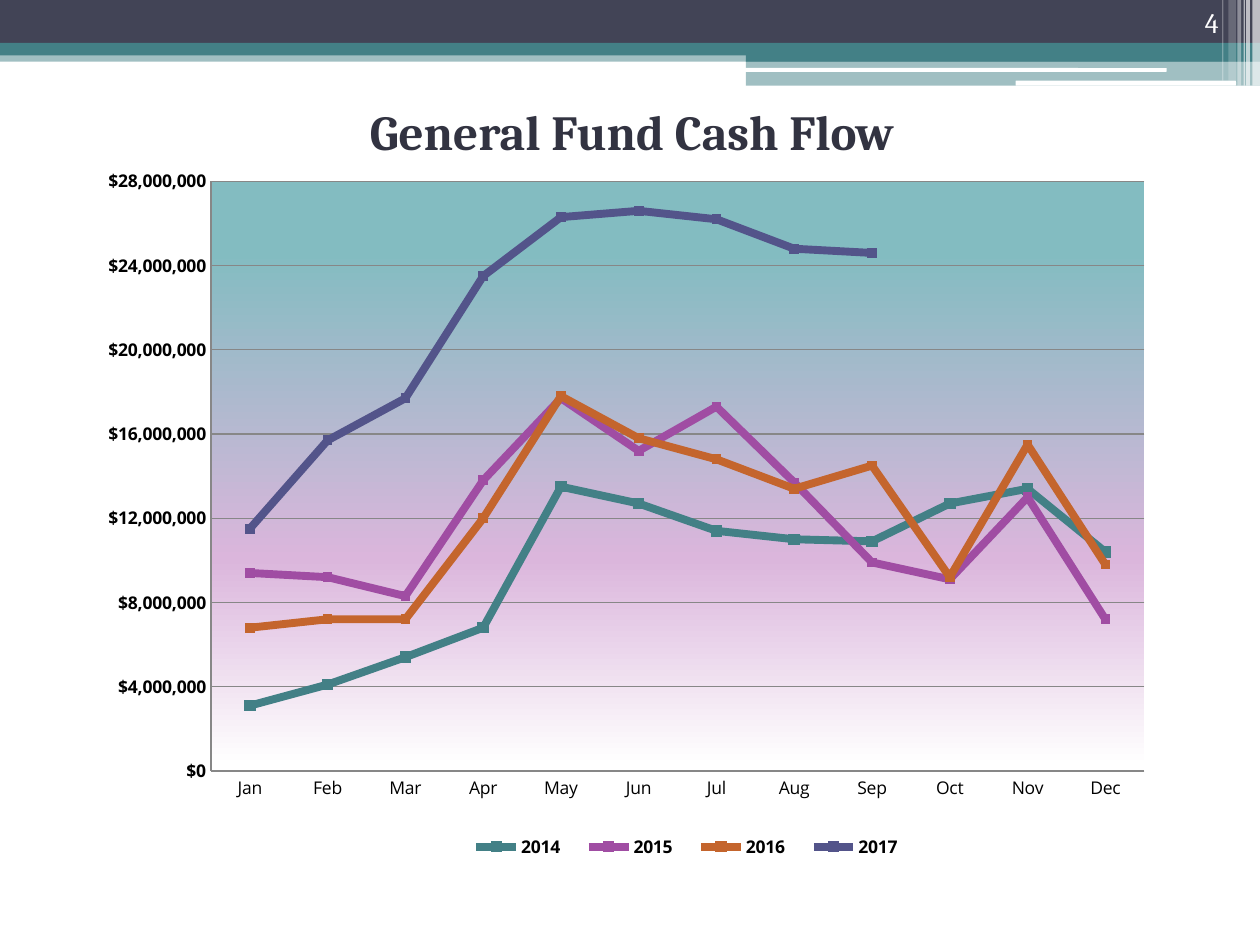
from dataclasses import dataclass
from typing import Optional

from lxml import etree
from pptx import Presentation
from pptx import util as u
from pptx.chart.data import CategoryChartData
from pptx.dml.color import RGBColor
from pptx.enum import chart as charts, shapes, text
from pptx.oxml import parse_xml
from pptx.oxml.ns import nsdecls, qn


@dataclass(frozen=True)
class Theme:
    navy: str = "424456"
    teal: str = "438086"
    white: str = "FFFFFF"
    black: str = "000000"
    title: str = "323341"
    grid: str = "878787"
    heading_font: str = "Cambria"
    chart_font: str = "Open Sans"
    title_size: int = 28
    number_size: int = 16
    chart_size: int = 10
    plot_stops: tuple = ((12, "83BCC1"), (64, "DBB6DC"), (99, "FFFFFF"))


@dataclass(frozen=True)
class Band:
    left: float
    top: float
    width: float
    height: float
    color: str
    opacity: int = 100
    rounded: bool = False


@dataclass(frozen=True)
class Year:
    name: str
    color: str
    marker_size: int
    millions: tuple[Optional[float], ...]


THEME = Theme()

BANDS = [
    Band(0, 0.4, 10, 0.09, THEME.teal, 50),
    Band(0, 0, 10, 0.34, THEME.navy),
    Band(0, 0.34, 10, 0.1, THEME.teal),
    Band(5.92, 0.39, 4.08, 0.1, THEME.teal),
    Band(5.92, 0.48, 4.08, 0.2, THEME.teal, 50),
    Band(5.91, 0.54, 3.35, 0.03, THEME.white, rounded=True),
    Band(8.06, 0.64, 1.75, 0.04, THEME.white, rounded=True),
    Band(9.94, 0, 0.06, 0.68, THEME.white, 65),
    Band(9.89, 0, 0.03, 0.68, THEME.white, 65),
    Band(9.87, 0, 0.01, 0.68, THEME.white, 60),
    Band(9.82, 0, 0.03, 0.68, THEME.white, 40),
    Band(9.75, 0, 0.06, 0.64, THEME.white, 20),
    Band(9.7, 0, 0.01, 0.64, THEME.white, 30),
]

MONTHS = "Jan Feb Mar Apr May Jun Jul Aug Sep Oct Nov Dec".split()

YEARS = [
    Year("2014", "438086", 6, (3.1, 4.1, 5.4, 6.8, 13.5, 12.7, 11.4, 11, 10.9, 12.7, 13.4, 10.4)),
    Year("2015", "A04DA3", 5, (9.4, 9.2, 8.3, 13.8, 17.7, 15.2, 17.3, 13.7, 9.9, 9.1, 13, 7.2)),
    Year("2016", "C4652D", 5, (6.8, 7.2, 7.2, 12, 17.8, 15.8, 14.8, 13.4, 14.5, 9.2, 15.5, 9.8)),
    Year("2017", "53548A", 5, (11.5, 15.7, 17.7, 23.5, 26.3, 26.6, 26.2, 24.8, 24.6, None, None, None)),
]


def paint(fill, color: str) -> None:
    fill.solid()
    fill.fore_color.rgb = RGBColor.from_string(color)


def set_font(font, name: str, size: int, color: str, bold: bool = False) -> None:
    font.name = name
    font.size = u.Pt(size)
    font.bold = bold
    font.color.rgb = RGBColor.from_string(color)


def draw_band(slide, band: Band) -> None:
    kind = shapes.MSO_SHAPE.ROUNDED_RECTANGLE if band.rounded else shapes.MSO_SHAPE.RECTANGLE
    shape = slide.shapes.add_shape(
        kind, u.Inches(band.left), u.Inches(band.top), u.Inches(band.width), u.Inches(band.height)
    )
    shape.shadow.inherit = False
    shape.line.fill.background()
    paint(shape.fill, band.color)
    if band.opacity < 100:
        color = shape.fill._xPr.find(qn("a:solidFill"))[0]
        etree.SubElement(color, qn("a:alpha"), val=str(band.opacity * 1000))


def draw_text(slide, words: str, box: tuple[float, ...], anchor, align, size: int, color: str,
              bold: bool = False) -> None:
    frame = slide.shapes.add_textbox(*map(u.Inches, box)).text_frame
    frame.word_wrap = True
    frame.vertical_anchor = anchor
    paragraph = frame.paragraphs[0]
    paragraph.text = words
    paragraph.alignment = align
    set_font(paragraph.font, THEME.heading_font, size, color, bold)


def manual_layout(x: float, y: float, width: float, height: float, inner: bool = False):
    target = '<c:layoutTarget val="inner"/>' if inner else ""
    return parse_xml(
        f'<c:layout {nsdecls("c")}><c:manualLayout>{target}'
        '<c:xMode val="edge"/><c:yMode val="edge"/>'
        f'<c:x val="{x}"/><c:y val="{y}"/><c:w val="{width}"/><c:h val="{height}"/>'
        "</c:manualLayout></c:layout>"
    )


def style_plot_area(chart) -> None:
    plot_area = chart._chartSpace.chart.plotArea
    for layout in plot_area.findall(qn("c:layout")):
        plot_area.remove(layout)
    plot_area.insert(0, manual_layout(0.142, 0.06, 0.839, 0.78, inner=True))
    stops = "".join(
        f'<a:gs pos="{position * 1000}"><a:srgbClr val="{color}"/></a:gs>'
        for position, color in THEME.plot_stops
    )
    plot_area.append(parse_xml(
        f'<c:spPr {nsdecls("c", "a")}><a:gradFill><a:gsLst>{stops}</a:gsLst>'
        '<a:lin ang="5400000" scaled="0"/></a:gradFill><a:ln><a:noFill/></a:ln></c:spPr>'
    ))


def style_axes(chart) -> None:
    months, dollars = chart.category_axis, chart.value_axis
    dollars.minimum_scale, dollars.maximum_scale = 0, 28_000_000
    dollars.major_unit = 4_000_000
    dollars.has_major_gridlines = True
    dollars.tick_labels.number_format = '"$"#,##0'
    dollars.tick_labels.number_format_is_linked = False
    for axis, bold in ((months, False), (dollars, True)):
        axis.major_tick_mark = axis.minor_tick_mark = charts.XL_TICK_MARK.NONE
        set_font(axis.tick_labels.font, THEME.chart_font, THEME.chart_size, THEME.black, bold)
    for line in (months.format.line, dollars.format.line, dollars.major_gridlines.format.line):
        paint(line.fill, THEME.grid)
        line.width = u.Pt(0.75)


def style_legend(chart) -> None:
    chart.has_legend = True
    legend = chart.legend
    legend.position = charts.XL_LEGEND_POSITION.BOTTOM
    legend.include_in_layout = False
    set_font(legend.font, THEME.chart_font, THEME.chart_size, THEME.black, True)
    for layout in legend._element.findall(qn("c:layout")):
        legend._element.remove(layout)
    legend._element.find(qn("c:legendPos")).addnext(manual_layout(0.36, 0.91, 0.42, 0.06))


def draw_chart(slide) -> None:
    data = CategoryChartData()
    data.categories = MONTHS
    for year in YEARS:
        data.add_series(year.name, [None if m is None else round(m * 1_000_000) for m in year.millions])
    chart = slide.shapes.add_chart(
        charts.XL_CHART_TYPE.LINE_MARKERS,
        u.Inches(0.42), u.Inches(1.08), u.Inches(8.83), u.Inches(6), data,
    ).chart
    chart.has_title = False
    set_font(chart.font, THEME.chart_font, THEME.chart_size, THEME.black)
    chart.plots[0].vary_by_categories = False
    for series, year in zip(chart.plots[0].series, YEARS):
        series.smooth = False
        series.format.line.width = u.Pt(4.5)
        paint(series.format.line.fill, year.color)
        series.marker.style = charts.XL_MARKER_STYLE.SQUARE
        series.marker.size = year.marker_size
        paint(series.marker.format.fill, year.color)
        paint(series.marker.format.line.fill, year.color)
    style_axes(chart)
    style_legend(chart)
    style_plot_area(chart)


def main() -> None:
    presentation = Presentation()
    presentation.slide_width, presentation.slide_height = u.Inches(10), u.Inches(7.5)
    slide = presentation.slides.add_slide(presentation.slide_layouts[6])
    for band in BANDS:
        draw_band(slide, band)
    draw_text(slide, "General Fund Cash Flow", (0.18, 0.5, 9.67, 1.08), text.MSO_ANCHOR.MIDDLE,
              text.PP_ALIGN.CENTER, THEME.title_size, THEME.title, True)
    draw_text(slide, "4", (8.94, 0, 0.83, 0.36), text.MSO_ANCHOR.BOTTOM,
              text.PP_ALIGN.RIGHT, THEME.number_size, THEME.white)
    draw_chart(slide)
    presentation.save("out.pptx")


if __name__ == "__main__":
    main()
